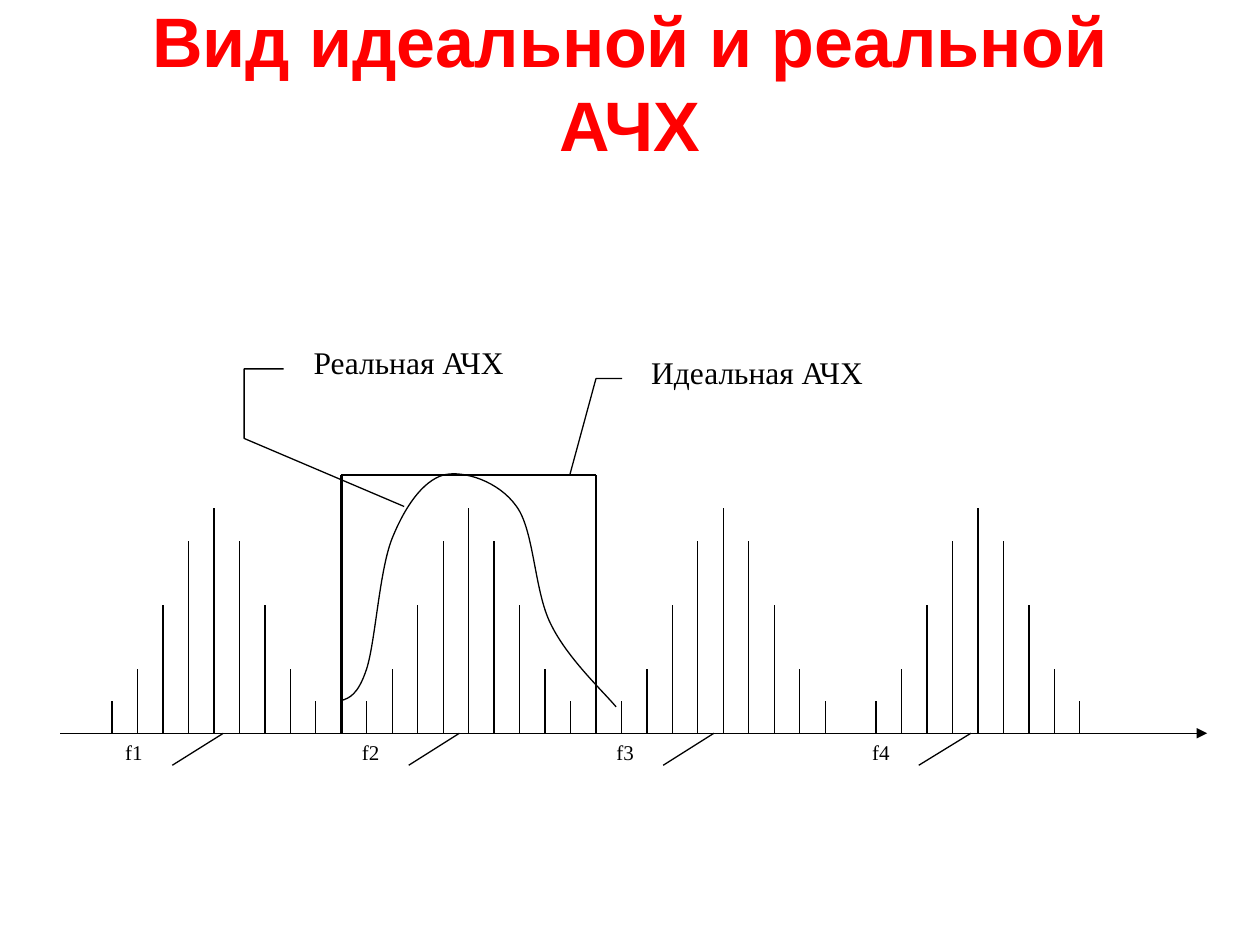
import pptx
import pptx.util
import pptx.dml.color
import pptx.enum.shapes
import pptx.enum.text
import pptx.oxml.ns
import lxml.etree
from dataclasses import dataclass

Inches = pptx.util.Inches
Pt = pptx.util.Pt
RGB = pptx.dml.color.RGBColor
Shape = pptx.enum.shapes.MSO_SHAPE
Align = pptx.enum.text.PP_ALIGN
Anchor = pptx.enum.text.MSO_ANCHOR
qn = pptx.oxml.ns.qn


@dataclass(frozen=True)
class Theme:
    ink: RGB = RGB(0, 0, 0)
    red: RGB = RGB(255, 0, 0)
    head: str = "Arial"
    body: str = "Times New Roman"
    title: int = 40
    label: int = 18
    small: int = 12
    thin: float = 0.75
    thick: float = 1.5


THEME = Theme()

# Frequency axis: four bands, ten steps apart
BASE = 5.82
FIRST, LAST = 0.89, 8.57
GAP = (LAST - FIRST) / 38
BANDS = 4
TOPS = (4.03, 4.29, 4.8, 5.31, 5.56)  # from band centre outwards
ROOF = 3.77

# Start, then two handles and an end for each bend
CURVE = [
    (2.71, 5.56),
    (2.77, 5.54), (2.84, 5.52), (2.91, 5.31),
    (2.98, 5.09), (3.01, 4.54), (3.11, 4.28),
    (3.21, 4.03), (3.35, 3.82), (3.52, 3.77),
    (3.68, 3.73), (3.96, 3.82), (4.1, 4.02),
    (4.24, 4.21), (4.24, 4.69), (4.37, 4.95),
    (4.5, 5.22), (4.78, 5.48), (4.89, 5.61),
]

# Kind, box, leader adjustments, text, size, alignment
ONE = Shape.LINE_CALLOUT_1_NO_BORDER
TWO = Shape.LINE_CALLOUT_2_NO_BORDER
THREE = Shape.LINE_CALLOUT_3_NO_BORDER
NOTES = [
    (THREE, (2.39, 2.67, 1.74, 0.6),
     (0.43, -0.08, 0.43, -0.26, 1.35, -0.26, 2.25, 0.47),
     "Реальная АЧХ", THEME.label, Align.LEFT),
    (TWO, (5.07, 2.75, 1.89, 0.51), (0.5, -0.07, 0.5, -0.18, 2, -0.29),
     "Идеальная АЧХ", THEME.label, Align.LEFT),
]
# Left, width, leader start and end as shares of the width
BANDTAGS = [
    (0.42, 0.81, 1.17, 1.67),
    (2.44, 0.67, 1.2, 1.8),
    (4.46, 0.67, 1.2, 1.8),
    (6.28, 0.88, 1.15, 1.62),
]


def style(para, size, face, color, align):
    para.alignment = align
    font = para.font
    font.size, font.name = Pt(size), face
    font.color.rgb = color


def stroke(line, width):
    line.color.rgb = THEME.ink
    line.width = Pt(width)


def add_title(slide, text):
    box = slide.shapes.add_textbox(
        Inches(0.5), Inches(0.3), Inches(9), Inches(0.7))
    frame = box.text_frame
    frame.word_wrap = True
    frame.vertical_anchor = Anchor.MIDDLE
    para = frame.paragraphs[0]
    para.text = text
    style(para, THEME.title, THEME.head, THEME.red, Align.CENTER)
    para.font.bold = True


def add_line(slide, start, end, width=THEME.thin, arrow=False):
    link = slide.shapes.add_connector(
        pptx.enum.shapes.MSO_CONNECTOR.STRAIGHT,
        *(Inches(v) for v in (*start, *end)))
    stroke(link.line, width)
    if arrow:
        tail = lxml.etree.SubElement(
            link.line._get_or_add_ln(), qn("a:tailEnd"))
        tail.set("type", "triangle")
    lxml.etree.SubElement(link._element.spPr, qn("a:effectLst"))


def add_curve(slide, points):
    spots = [(Inches(x), Inches(y)) for x, y in points]
    pen = slide.shapes.build_freeform(*spots[0])
    pen.add_line_segments(spots[1:], close=False)
    shape = pen.convert_to_shape()
    shape.shadow.inherit = False
    shape.fill.background()
    stroke(shape.line, THEME.thin)
    # Turn each three segments into one smooth bend
    legs = list(shape._element.iter(qn("a:lnTo")))
    for i in range(0, len(legs), 3):
        bend = lxml.etree.Element(qn("a:cubicBezTo"))
        legs[i].addprevious(bend)
        for leg in legs[i:i + 3]:
            bend.append(leg[0])
            leg.getparent().remove(leg)


def add_note(slide, kind, box, leads, text, size, align):
    shape = slide.shapes.add_shape(kind, *(Inches(v) for v in box))
    for i, lead in enumerate(leads):
        shape.adjustments[i] = lead
    shape.shadow.inherit = False
    shape.fill.background()
    stroke(shape.line, THEME.thin)
    frame = shape.text_frame
    frame.word_wrap = True
    frame.vertical_anchor = Anchor.TOP
    para = frame.paragraphs[0]
    para.text = text
    style(para, size, THEME.body, THEME.ink, align)


def main():
    deck = pptx.Presentation()
    deck.slide_width, deck.slide_height = Inches(10), Inches(7.5)
    slide = deck.slides.add_slide(deck.slide_layouts[6])
    add_title(slide, "Вид идеальной и реальной АЧХ")

    # Axis and spectrum bars
    add_line(slide, (0.48, BASE), (9.58, BASE), arrow=True)
    for band in range(BANDS):
        for step in range(-4, 5):
            x = FIRST + (10 * band + 4 + step) * GAP
            add_line(slide, (x, BASE), (x, TOPS[abs(step)]))

    # Ideal response
    left, right = FIRST + 9 * GAP, FIRST + 19 * GAP
    for x in (left, right):
        add_line(slide, (x, BASE), (x, ROOF), THEME.thick)
    add_line(slide, (left, ROOF), (right, ROOF), THEME.thick)

    # Real response
    add_curve(slide, CURVE)

    # Labels with leaders
    for note in NOTES:
        add_note(slide, *note)
    for i, (x, width, start, end) in enumerate(BANDTAGS, 1):
        add_note(slide, ONE, (x, BASE, width, 0.77), (0.33, start, 0, end),
                 f"f{i}", THEME.small, Align.RIGHT)

    deck.save("out.pptx")


if __name__ == "__main__":
    main()
